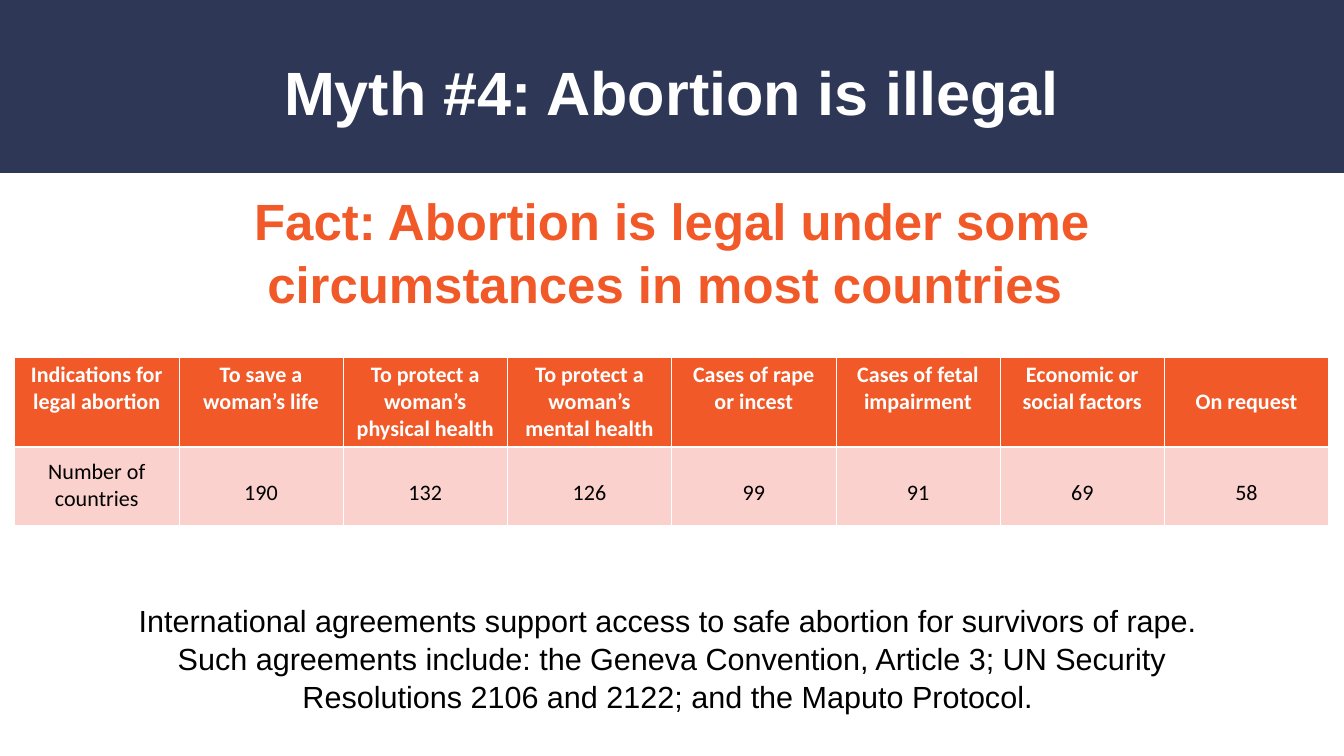
from lxml import etree
from pptx import Presentation
from pptx.dml.color import RGBColor
from pptx.enum.shapes import MSO_SHAPE
from pptx.enum.text import MSO_ANCHOR, PP_ALIGN
from pptx.oxml.ns import qn
from pptx.util import Inches, Pt

RECT = MSO_SHAPE.RECTANGLE
CENTER = PP_ALIGN.CENTER
TOP, MIDDLE = MSO_ANCHOR.TOP, MSO_ANCHOR.MIDDLE

NAVY, ORANGE, PINK, WHITE, BLACK = "2E3856", "F15928", "FAD1CD", "FFFFFF", "000000"
SLIDE_W, SLIDE_H = Inches(21.99), Inches(12.37)
BAND_H = 22.88

TEXTS = [
    ("Myth #4: Abortion is illegal", (9.05, 7.19, 81.86, 9.78),
     dict(size=72, color=WHITE, bold=True, anchor=MIDDLE)),
    ("Fact: Abortion is legal under some circumstances in most countries ",
     (9.46, 24.74, 81.08, 17), dict(size=60, color=ORANGE, bold=True, spacing=1.04)),
    ("International agreements support access to safe abortion for survivors of rape. \v"
     "Such agreements include: the Geneva Convention, Article 3; UN Security "
     "Resolutions 2106 and 2122; and the Maputo Protocol. ",
     (9.46, 79.39, 81.08, 15), dict(size=36, color=BLACK, spacing=1.04)),
]
COUNTRIES = [
    ("Indications for legal abortion", "Number of countries"),
    ("To save a woman’s life", "190"),
    ("To protect a woman’s physical health", "132"),
    ("To protect a woman’s mental health", "126"),
    ("Cases of rape or incest", "99"),
    ("Cases of fetal impairment", "91"),
    ("Economic or social factors", "69"),
    ("On request", "58"),
]
TABLE_X, TABLE_Y, TABLE_W = 1.09, 47.29, 97.77
ROW_HEIGHTS = (11.8, 10.35)
ROW_STYLES = [
    dict(fill=ORANGE, color=WHITE, bold=True, borders=dict(L=1, R=1, T=1, B=3)),
    dict(fill=PINK, color=BLACK, bold=False, borders=dict(L=1, R=1, T=3, B=1)),
]


def rgb(value):
    """Return the colour of a hex string."""
    return RGBColor.from_string(value)


def across(percent):
    """Return a share of the slide's width."""
    return round(SLIDE_W * percent / 100)


def down(percent):
    """Return a share of the slide's height."""
    return round(SLIDE_H * percent / 100)


def write(tf, text, size, color, bold=False, font="Arial", spacing=None):
    """Put one centred, formatted paragraph in a text frame."""
    p = tf.paragraphs[0]
    p.text = text
    p.alignment = CENTER
    p.line_spacing = spacing
    for r in p.runs:
        r.font.size = Pt(size)
        r.font.name = font
        r.font.bold = bold
        r.font.color.rgb = rgb(color)


def add_text(s, text, box, anchor=TOP, **style):
    """Add a text box without insets."""
    x, y, w, h = box
    tf = s.shapes.add_textbox(across(x), down(y), across(w), down(h)).text_frame
    tf.word_wrap = True
    tf.vertical_anchor = anchor
    tf.margin_left = tf.margin_top = tf.margin_right = tf.margin_bottom = 0
    write(tf, text, **style)


def set_borders(cell, widths):
    """Draw white cell borders with the given widths in points."""
    tc_pr = cell._tc.get_or_add_tcPr()
    for side, width in widths.items():
        ln = etree.SubElement(tc_pr, qn(f"a:ln{side}"), w=str(Pt(width)))
        fill = etree.SubElement(ln, qn("a:solidFill"))
        etree.SubElement(fill, qn("a:srgbClr"), val=WHITE)


def fill_cell(cell, text, row, fill, color, bold, borders):
    """Format one table cell; lone words and figures sit lower."""
    set_borders(cell, borders)
    cell.fill.solid()
    cell.fill.fore_color.rgb = rgb(fill)
    cell.margin_left = cell.margin_right = Inches(0.15)
    cell.margin_top = Inches(0.3 if text.isdigit() else 0.07)
    cell.margin_bottom = Inches(0.07)
    cell.vertical_anchor = MIDDLE if row or text == "On request" else TOP
    write(cell.text_frame, text, 26, color, bold, "Calibri")


def add_countries(s):
    """Add the table of legal indications."""
    table = s.shapes.add_table(
        len(ROW_HEIGHTS), len(COUNTRIES), across(TABLE_X), down(TABLE_Y),
        across(TABLE_W), down(sum(ROW_HEIGHTS))).table
    for row, height in enumerate(ROW_HEIGHTS):
        table.rows[row].height = down(height)
    for col, texts in enumerate(COUNTRIES):
        table.columns[col].width = across(TABLE_W / len(COUNTRIES))
        for row, text in enumerate(texts):
            fill_cell(table.cell(row, col), text, row, **ROW_STYLES[row])


def main():
    """Build and save the slide."""
    prs = Presentation()
    prs.slide_width, prs.slide_height = SLIDE_W, SLIDE_H
    s = prs.slides.add_slide(prs.slide_layouts[6])
    band = s.shapes.add_shape(RECT, 0, 0, SLIDE_W, down(BAND_H))
    band.shadow.inherit = False
    band.fill.solid()
    band.fill.fore_color.rgb = rgb(NAVY)
    band.line.fill.background()
    for text, box, style in TEXTS:
        add_text(s, text, box, **style)
    add_countries(s)
    prs.save("out.pptx")


if __name__ == "__main__":
    main()
